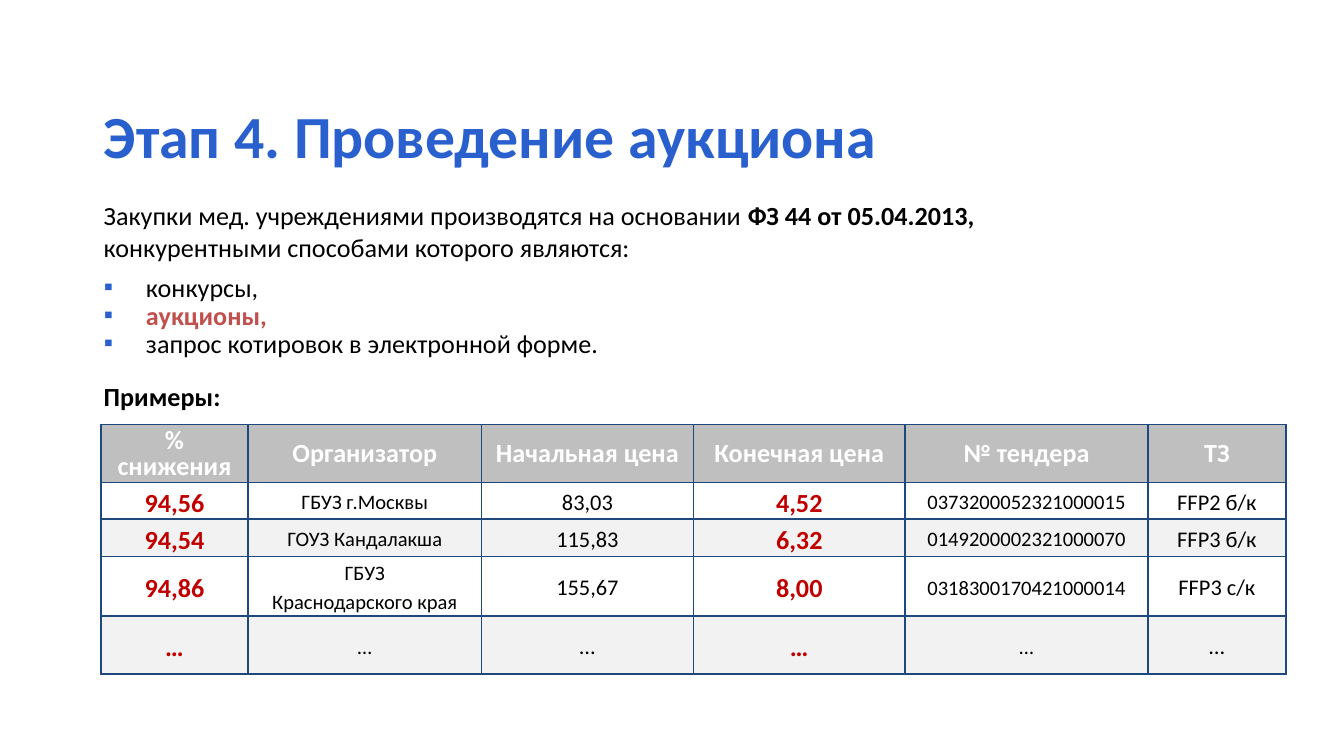
"""Builds the slide about the auction stage of medical procurement."""
from lxml import etree
from pptx import Presentation
from pptx.dml.color import RGBColor
from pptx.enum import text
from pptx.oxml.ns import qn
from pptx.util import Pt

FONT = "Calibri"
COLORS = {"blue": "2960CD", "black": "000000", "white": "FFFFFF", "coral": "C0504D",
          "red": "C00000", "header": "BFBFBF", "band": "F2F2F2", "border": "1F497D"}

TITLE = "Этап 4. Проведение аукциона"
INTRO = [
    [("Закупки мед. учреждениями производятся на основании ", False),
     ("ФЗ 44 от 05.04.2013,", True)],
    [("конкурентными способами которого являются:", False)],
]
METHODS = [("конкурсы,", "black", False), ("аукционы,", "coral", True),
           ("запрос котировок в электронной форме.", "black", False)]
EXAMPLES = "Примеры:"
HEADERS = ["% снижения", "Организатор", "Начальная цена", "Конечная цена", "№ тендера", "ТЗ"]
TENDERS = [
    ["94,56", "ГБУЗ г.Москвы", "83,03", "4,52", "0373200052321000015", "FFP2 б/к"],
    ["94,54", "ГОУЗ Кандалакша", "115,83", "6,32", "0149200002321000070", "FFP3 б/к"],
    ["94,86", "ГБУЗ\nКраснодарского края", "155,67", "8,00", "0318300170421000014", "FFP3 с/к"],
    ["…"] * len(HEADERS),
]
HEADER_STYLE = (14, "white", True)
COLUMN_STYLES = [(14, "red", True), (11, "black", False), (12, "black", False),
                 (14, "red", True), (11, "black", False), (12, "black", False)]
COLUMN_WIDTHS = [79, 125, 113.5, 113.5, 130, 74]
ROW_HEIGHTS = [31, 19, 20, 32, 31]
HEADER_TOP_MARGIN = 3
LEFT = 48.5


def rgb(name):
    return RGBColor.from_string(COLORS[name])


def set_font(font, size, color, bold):
    font.name, font.size, font.bold = FONT, Pt(size), bold
    font.color.rgb = rgb(color)


def place(box, top, width, height):
    box.left, box.top, box.width, box.height = Pt(LEFT), Pt(top), Pt(width), Pt(height)
    frame = box.text_frame
    frame.word_wrap = True
    frame.auto_size = text.MSO_AUTO_SIZE.NONE
    frame.vertical_anchor = text.MSO_ANCHOR.TOP
    return frame


def add_box(page, top, width, height):
    return place(page.shapes.add_textbox(0, 0, 0, 0), top, width, height)


def paragraph_at(frame, index):
    return frame.paragraphs[0] if index == 0 else frame.add_paragraph()


def add_color(parent, color):
    etree.SubElement(parent, qn("a:srgbClr"), val=COLORS[color])


def add_bullet(para):
    props = para._p.get_or_add_pPr()
    props.set("marL", str(Pt(22.5)))
    props.set("indent", str(-Pt(22.5)))
    add_color(etree.SubElement(props, qn("a:buClr")), "blue")
    etree.SubElement(props, qn("a:buChar"), char="▪")


def add_borders(cell):
    props = cell._tc.get_or_add_tcPr()
    for side in ("lnL", "lnR", "lnT", "lnB"):
        line = etree.SubElement(props, qn(f"a:{side}"), w=str(Pt(1)))
        add_color(etree.SubElement(line, qn("a:solidFill")), "border")


def fill_cell(cell, words, style, fill, spacing, top_margin=0):
    add_borders(cell)
    cell.fill.solid()
    cell.fill.fore_color.rgb = rgb(fill)
    cell.margin_left = cell.margin_right = Pt(5)
    cell.margin_top, cell.margin_bottom = Pt(top_margin), 0
    cell.vertical_anchor = text.MSO_ANCHOR.MIDDLE
    para = cell.text_frame.paragraphs[0]
    para.text = words
    para.alignment = text.PP_ALIGN.CENTER
    para.line_spacing = spacing
    set_font(para.font, *style)


def add_tenders(page):
    rows = [HEADERS] + TENDERS
    table = page.shapes.add_table(len(rows), len(HEADERS), Pt(54), Pt(227.5),
                                  Pt(sum(COLUMN_WIDTHS)), Pt(sum(ROW_HEIGHTS))).table
    table.first_row = table.horz_banding = False
    for column, width in zip(table.columns, COLUMN_WIDTHS):
        column.width = Pt(width)
    for r, (row, height) in enumerate(zip(rows, ROW_HEIGHTS)):
        table.rows[r].height = Pt(height)
        for c, words in enumerate(row):
            cell = table.cell(r, c)
            if r == 0:
                fill_cell(cell, words, HEADER_STYLE, "header", Pt(14), HEADER_TOP_MARGIN)
            else:
                fill_cell(cell, words, COLUMN_STYLES[c], "white" if r % 2 else "band", 1.15)


def main():
    deck = Presentation()
    deck.slide_width, deck.slide_height = Pt(720), Pt(405)
    page = deck.slides.add_slide(deck.slide_layouts[1])

    para = place(page.shapes.title, 49.5, 671, 46).paragraphs[0]
    para.text = TITLE
    para.alignment = text.PP_ALIGN.LEFT
    set_font(para.font, 32, "blue", True)

    frame = add_box(page, 103.5, 618, 41)
    for i, spans in enumerate(INTRO):
        para = paragraph_at(frame, i)
        for words, bold in spans:
            span = para.add_run()
            span.text = words
            set_font(span.font, 14, "black", bold)

    frame = place(page.placeholders[1], 143.5, 556, 52.5)
    for i, (words, color, bold) in enumerate(METHODS):
        para = paragraph_at(frame, i)
        para.text = words
        add_bullet(para)
        para.line_spacing = Pt(15)
        para.space_before = Pt(0)
        set_font(para.font, 14, color, bold)

    para = add_box(page, 200, 96.5, 24.5).paragraphs[0]
    para.text = EXAMPLES
    set_font(para.font, 14, "black", True)

    add_tenders(page)
    deck.save("out.pptx")


if __name__ == "__main__":
    main()
